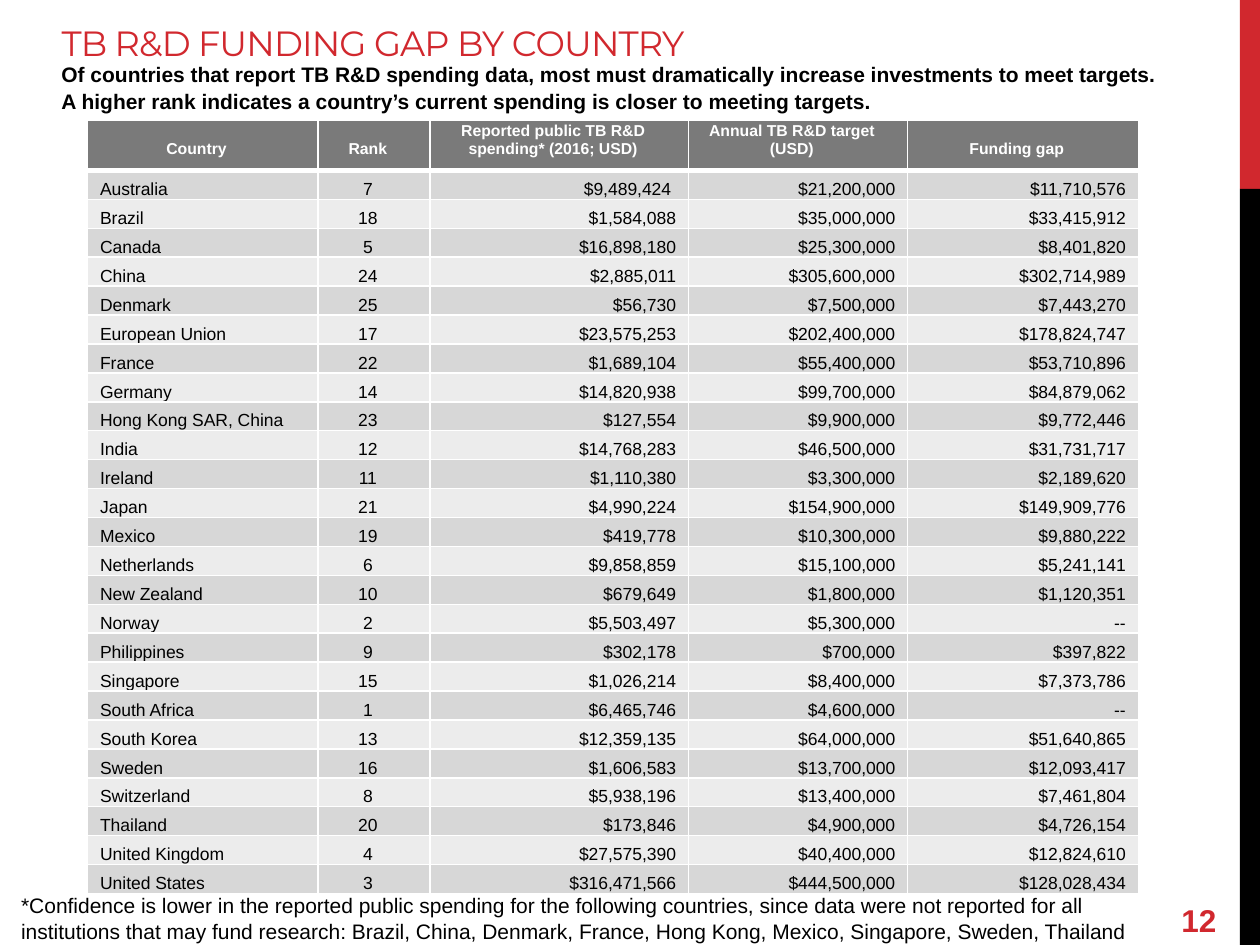
from lxml.etree import SubElement
from pptx import Presentation
from pptx.dml.color import RGBColor
from pptx.enum.shapes import MSO_SHAPE
from pptx.enum.text import MSO_ANCHOR, PP_ALIGN
from pptx.oxml.ns import qn
from pptx.util import Pt

RED, BLACK, WHITE = "D1282E", "000000", "FFFFFF"
HEADER_FILL, BANDS = "7A7A7A", ("D7D7D7", "ECECEC")
COL_WIDTHS = (131.76, 64.08, 147.6, 125.28, 131.76)
HEADER_HEIGHT, ROW_HEIGHT = 21.6, 16.55
ALIGNS = (PP_ALIGN.LEFT, PP_ALIGN.CENTER) + (PP_ALIGN.RIGHT,) * 3

TITLE = "TB R&D FUNDING GAP BY COUNTRY"
SUBTITLE = (
    "Of countries that report TB R&D spending data, most must dramatically "
    "increase investments to meet targets. A higher rank indicates a "
    "country’s current spending is closer to meeting targets."
)
FOOTNOTE = (
    "*Confidence is lower in the reported public spending for the following "
    "countries, since data were not reported for all institutions that may "
    "fund research: Brazil, China, Denmark, France, Hong Kong, Mexico, "
    "Singapore, Sweden, Thailand"
)
HEADERS = (
    "Country",
    "Rank",
    "Reported public TB R&D spending* (2016; USD)",
    "Annual TB R&D target (USD)",
    "Funding gap",
)
ROWS = (
    ("Australia", "7", "$9,489,424 ", "$21,200,000", "$11,710,576"),
    ("Brazil", "18", "$1,584,088", "$35,000,000", "$33,415,912"),
    ("Canada", "5", "$16,898,180", "$25,300,000", "$8,401,820"),
    ("China", "24", "$2,885,011", "$305,600,000", "$302,714,989"),
    ("Denmark", "25", "$56,730", "$7,500,000", "$7,443,270"),
    ("European Union", "17", "$23,575,253", "$202,400,000", "$178,824,747"),
    ("France", "22", "$1,689,104", "$55,400,000", "$53,710,896"),
    ("Germany", "14", "$14,820,938", "$99,700,000", "$84,879,062"),
    ("Hong Kong SAR, China", "23", "$127,554", "$9,900,000", "$9,772,446"),
    ("India", "12", "$14,768,283", "$46,500,000", "$31,731,717"),
    ("Ireland", "11", "$1,110,380", "$3,300,000", "$2,189,620"),
    ("Japan", "21", "$4,990,224", "$154,900,000", "$149,909,776"),
    ("Mexico", "19", "$419,778", "$10,300,000", "$9,880,222"),
    ("Netherlands", "6", "$9,858,859", "$15,100,000", "$5,241,141"),
    ("New Zealand", "10", "$679,649", "$1,800,000", "$1,120,351"),
    ("Norway", "2", "$5,503,497", "$5,300,000", "--"),
    ("Philippines", "9", "$302,178", "$700,000", "$397,822"),
    ("Singapore", "15", "$1,026,214", "$8,400,000", "$7,373,786"),
    ("South Africa", "1", "$6,465,746", "$4,600,000", "--"),
    ("South Korea", "13", "$12,359,135", "$64,000,000", "$51,640,865"),
    ("Sweden", "16", "$1,606,583", "$13,700,000", "$12,093,417"),
    ("Switzerland", "8", "$5,938,196", "$13,400,000", "$7,461,804"),
    ("Thailand", "20", "$173,846", "$4,900,000", "$4,726,154"),
    ("United Kingdom", "4", "$27,575,390", "$40,400,000", "$12,824,610"),
    ("United States", "3", "$316,471,566", "$444,500,000", "$128,028,434"),
)


def set_attrs(obj, values):
    """Set each named attribute of an object."""
    for name, value in values.items():
        setattr(obj, name, value)


def paint(fill, color):
    """Give a fill one solid colour."""
    fill.solid()
    fill.fore_color.rgb = RGBColor.from_string(color)


def write(tf, text, size, color, bold=False, font="Arial", align=PP_ALIGN.LEFT, spacing=1.0):
    """Write one formatted paragraph and return its run."""
    p = tf.paragraphs[0]
    set_attrs(p, {"alignment": align, "line_spacing": spacing})
    r = p.add_run()
    r.text = text
    set_attrs(r.font, {"size": Pt(size), "bold": bold, "name": font})
    paint(r.font.fill, color)
    return r


def add_bar(s, top, height, color):
    """Add a section of the right edge bar."""
    sp = s.shapes.add_shape(MSO_SHAPE.RECTANGLE, Pt(708.5), Pt(top), Pt(11.5), Pt(height))
    sp.shadow.inherit = False
    paint(sp.fill, color)
    sp.line.fill.background()


def add_title(s, text):
    """Place and format the title placeholder."""
    sp = s.shapes.title
    set_attrs(sp, {"left": Pt(28), "top": Pt(5.75), "width": Pt(551), "height": Pt(34)})
    set_attrs(sp.text_frame, {"vertical_anchor": MSO_ANCHOR.BOTTOM, "word_wrap": True})
    r = write(sp.text_frame, text, 20, RED, font="Montserrat")
    r.font._element.set("spc", "-50")


def add_text(s, box, text, size, color, bold=False, anchor=MSO_ANCHOR.TOP, spacing=1.0):
    """Add a wrapped text box."""
    tf = s.shapes.add_textbox(*map(Pt, box)).text_frame
    set_attrs(tf, {"word_wrap": True, "vertical_anchor": anchor})
    write(tf, text, size, color, bold, spacing=spacing)


def set_borders(cell, top, bottom):
    """Draw white cell borders with the given top and bottom widths."""
    tc_pr = cell._tc.get_or_add_tcPr()
    for side, width in (("L", 1), ("R", 1), ("T", top), ("B", bottom)):
        ln = SubElement(tc_pr, qn(f"a:ln{side}"), w=str(Pt(width)))
        fill = SubElement(ln, qn("a:solidFill"))
        SubElement(fill, qn("a:srgbClr"), val=WHITE)


def format_cell(cell, text, row, col):
    """Fill, border and write one cell."""
    header = row == 0
    set_borders(cell, 3 if row == 1 else 1, 3 if header else 1)
    paint(cell.fill, HEADER_FILL if header else BANDS[(row - 1) % 2])
    set_attrs(cell, {
        "vertical_anchor": MSO_ANCHOR.BOTTOM,
        "margin_left": Pt(0 if header or col else 7.2),
        "margin_top": Pt(0),
        "margin_right": Pt(7.2),
        "margin_bottom": Pt(7.2 if header else 0),
    })
    if header:
        write(cell.text_frame, text, 9, WHITE, True, align=PP_ALIGN.CENTER)
    else:
        write(cell.text_frame, text, 10, BLACK, align=ALIGNS[col])


def add_funding_table(s):
    """Add the table of spending, targets and gaps."""
    heights = [HEADER_HEIGHT] + [ROW_HEIGHT] * len(ROWS)
    table = s.shapes.add_table(
        len(heights), len(HEADERS), Pt(50), Pt(68.5), Pt(sum(COL_WIDTHS)), Pt(sum(heights))
    ).table
    for column, width in zip(table.columns, COL_WIDTHS):
        column.width = Pt(width)
    for i, values in enumerate((HEADERS,) + ROWS):
        table.rows[i].height = Pt(heights[i])
        for j, text in enumerate(values):
            format_cell(table.cell(i, j), text, i, j)


def main():
    """Build and save the slide."""
    prs = Presentation()
    set_attrs(prs, {"slide_width": Pt(720), "slide_height": Pt(540)})
    s = prs.slides.add_slide(prs.slide_layouts[5])
    add_bar(s, 0, 108, RED)
    add_bar(s, 108, 432, BLACK)
    add_text(s, (668, 511, 104, 29), "12", 18, RED, True, MSO_ANCHOR.MIDDLE)
    add_title(s, TITLE)
    add_funding_table(s)
    add_text(s, (28, 31, 650, 51), SUBTITLE, 12, BLACK, True, spacing=1.05)
    add_text(s, (5, 505.5, 673, 51), FOOTNOTE, 12, BLACK, spacing=1.05)
    prs.save("out.pptx")


if __name__ == "__main__":
    main()
